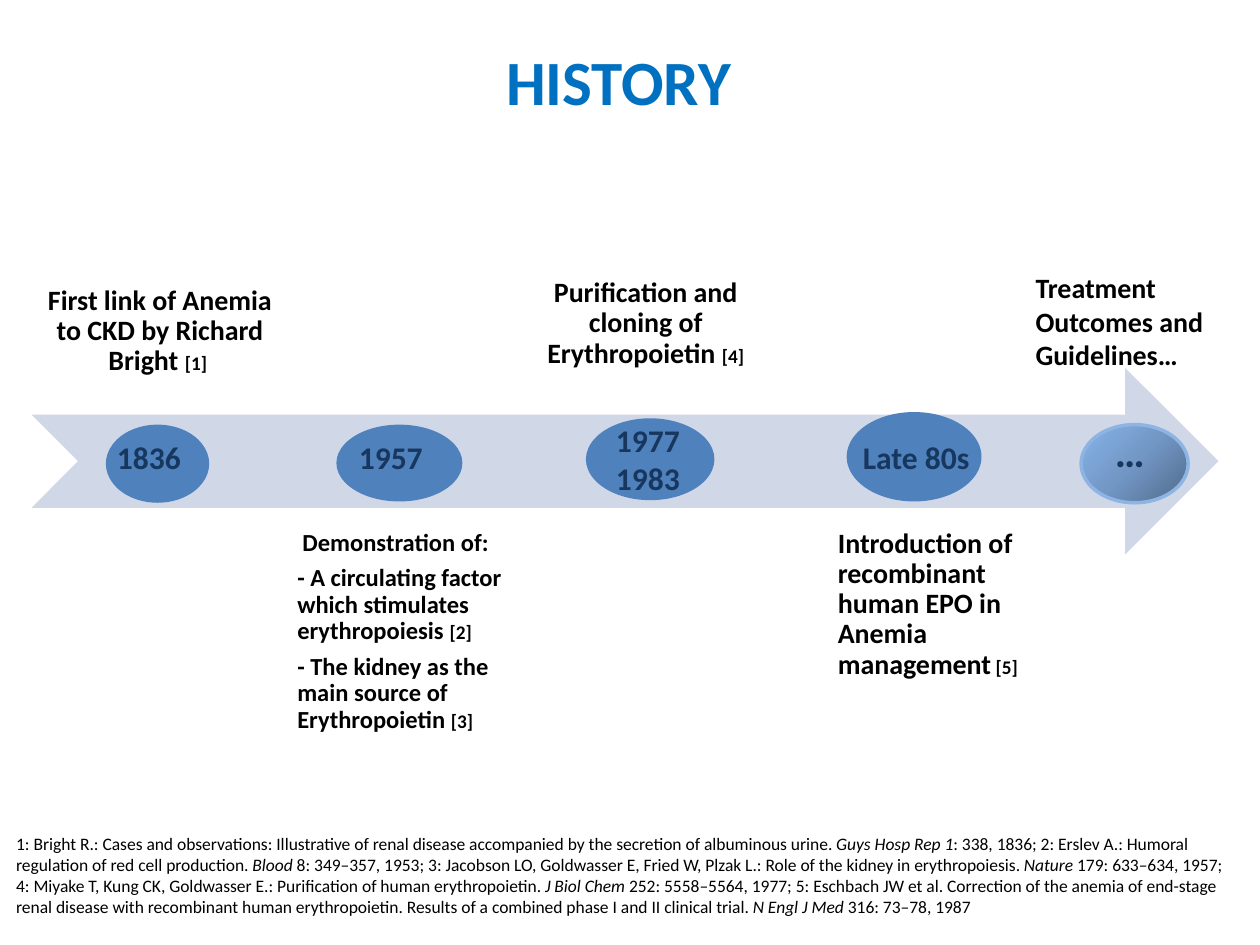
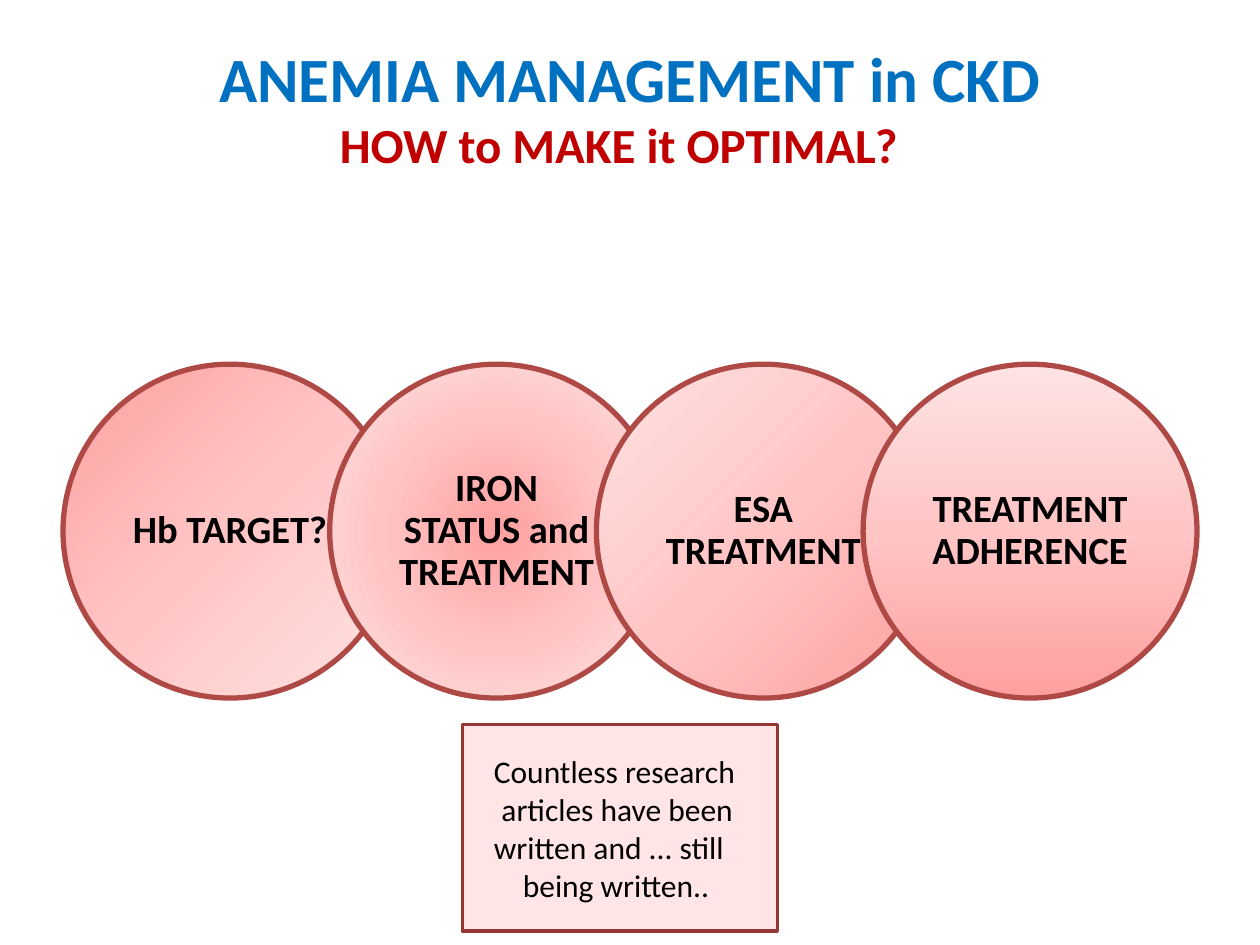
from lxml import etree
from pptx import Presentation
from pptx.dml.color import RGBColor
from pptx.enum.shapes import MSO_SHAPE
from pptx.enum.text import MSO_ANCHOR, MSO_AUTO_SIZE, PP_ALIGN
from pptx.oxml.ns import qn
from pptx.util import Pt

PX = 9144  # 100 px to the inch
FONT = "Calibri"
COLORS = {
    "title": "0070C0", "subtitle": "C00000", "text": "000000", "year": "17375E",
    "arrow": "D0D8E8", "milestone": "4F81BD", "future_line": "8EB4E3",
    "circle_line": "AE4946", "note": "FFE5E5", "note_line": "953735",
}
FUTURE_STOPS = ("506A8A", "7297C5", "87B3E9")
CIRCLE_STOPS = ("FFA0A0", "FFC5C5", "FFE3E3")
FROM_CORNER = {"l": 100, "t": 100}
FROM_CENTER = {"l": 50, "t": 50, "r": 50, "b": 50}

LEFT, CENTER = PP_ALIGN.LEFT, PP_ALIGN.CENTER
TOP, MIDDLE, BOTTOM = MSO_ANCHOR.TOP, MSO_ANCHOR.MIDDLE, MSO_ANCHOR.BOTTOM
OVAL, RECTANGLE = MSO_SHAPE.OVAL, MSO_SHAPE.RECTANGLE
NOTCHED_ARROW = MSO_SHAPE.NOTCHED_RIGHT_ARROW
NO_FIT = MSO_AUTO_SIZE.NONE


def emu(*lengths):
    return [round(length * PX) for length in lengths]


def rgb(name):
    return RGBColor.from_string(COLORS[name])


def write(shape, paragraphs, size=16, color="text", bold=True, align=LEFT, anchor=TOP,
          inset=(10, 5), wrap=True, spacing=None, after=0, indents=()):
    """Fill a shape with paragraphs, each a list of (text, run options).

    indents holds one dict of marL, marR and indent in px for each paragraph.
    """
    frame = shape.text_frame
    frame.word_wrap = wrap
    frame.auto_size = NO_FIT
    frame.vertical_anchor = anchor
    frame.margin_left = frame.margin_right = inset[0] * PX
    frame.margin_top = frame.margin_bottom = inset[1] * PX
    for index, runs in enumerate(paragraphs):
        paragraph = frame.add_paragraph() if index else frame.paragraphs[0]
        paragraph.alignment = align
        paragraph.space_before = Pt(0)
        paragraph.space_after = Pt(after)
        if spacing:
            paragraph.line_spacing = spacing
        if index < len(indents):
            for key, length in indents[index].items():
                paragraph._p.get_or_add_pPr().set(key, str(length * PX))
        for text, options in runs:
            run = paragraph.add_run()
            run.text = text
            font = run.font
            font.name = FONT
            font.size = Pt(options.get("size", size))
            font.bold = bold
            font.italic = options.get("italic", False)
            font.color.rgb = rgb(options.get("color", color))


def add_text(slide, box, paragraphs, **options):
    shape = slide.shapes.add_textbox(*emu(*box))
    write(shape, paragraphs, **options)


def set_gradient(shape, stops, angle=None, focus=None):
    """Fill with even stops, along an angle or spreading from a focus."""
    shape.fill.background()
    properties = shape._element.spPr
    gradient = etree.Element(qn("a:gradFill"), rotWithShape="1")
    stop_list = etree.SubElement(gradient, qn("a:gsLst"))
    for index, color in enumerate(stops):
        position = 100000 * index // (len(stops) - 1)
        stop = etree.SubElement(stop_list, qn("a:gs"), pos=str(position))
        etree.SubElement(stop, qn("a:srgbClr"), val=color)
    if focus:
        radial = etree.SubElement(gradient, qn("a:path"))
        radial.set("path", "circle")
        etree.SubElement(radial, qn("a:fillToRect"),
                         {side: str(share * 1000) for side, share in focus.items()})
    else:
        etree.SubElement(gradient, qn("a:lin"), ang=str(angle * 60000), scaled="1")
    properties.replace(properties.find(qn("a:noFill")), gradient)


def add_shape(slide, kind, box, fill=None, line=None, line_width=2, gradient=None):
    shape = slide.shapes.add_shape(kind, *emu(*box))
    shape.shadow.inherit = False
    if gradient:
        set_gradient(shape, **gradient)
    else:
        shape.fill.solid()
        shape.fill.fore_color.rgb = rgb(fill)
    if line:
        shape.line.color.rgb = rgb(line)
        shape.line.width = Pt(line_width)
    else:
        shape.line.fill.background()
    return shape


def add_titled_slide(presentation, box, paragraphs, **options):
    slide = presentation.slides.add_slide(presentation.slide_layouts[5])
    title = slide.shapes.title
    title.left, title.top, title.width, title.height = emu(*box)
    write(title, paragraphs, size=36, color="title", align=CENTER, anchor=MIDDLE, **options)
    return slide


def add_timeline(slide, box):
    left, top, width, height = box
    add_shape(slide, NOTCHED_ARROW, box, "arrow")
    # Oval box, label box and years, measured from the arrow's corner
    milestones = [
        ((59, 45, 82, 62), (58, 51, 71, 40), ["1836"]),
        ((242, 45, 100, 61), (250, 51, 71, 40), ["1957"]),
        ((440, 40, 102, 65), (454, 37, 71, 71), ["1977", "1983"]),
        ((647, 35, 107, 71), (650, 51, 105, 40), ["Late 80s"]),
    ]
    for oval, label, years in milestones:
        add_shape(slide, OVAL, (left + oval[0], top + oval[1], *oval[2:]), "milestone")
        add_text(slide, (left + label[0], top + label[1], *label[2:]),
                 [[(year, {})] for year in years], size=18, color="year", wrap=False)
    add_shape(slide, OVAL, (left + width - 109, top + 45, 85, 62), line="future_line",
              gradient={"stops": FUTURE_STOPS, "focus": FROM_CORNER})
    add_text(slide, (left + width - 92, top + 41, 44, 50), [[("…", {})]],
             size=24, color="year", wrap=False)


def add_events(slide, arrow_left):
    """Place the events above and below the arrow, relative to its left end."""
    small = {"size": 11}
    event = {"inset": (12, 12), "spacing": 0.9, "after": 5}
    above = {**event, "align": CENTER, "anchor": BOTTOM}
    add_text(slide, (arrow_left, 113, 204, 198),
             [[("First link of Anemia to CKD by Richard Bright ", {}), ("[1] ", small)]], **above)
    add_text(slide, (arrow_left + 392, 113, 191, 192),
             [[("Purification and cloning of Erythropoietin ", {}), ("[4]", small)]], **above)
    add_text(slide, (arrow_left + 200, 410, 204, 198), [
        [("Demonstration of:", {})],
        [("- A circulating factor which stimulates erythropoiesis ", {}), ("[2]", small)],
        [("- The kidney as the main source of Erythropoietin ", {}), ("[3]", small)],
    ], size=14, indents=[{"marL": 4}], **{**event, "inset": (11, 11)})
    add_text(slide, (arrow_left + 628, 408, 204, 198),
             [[("Introduction of recombinant human EPO in Anemia management", {}),
               (" [5]", small)]], **event)
    add_text(slide, (arrow_left + 787, 210, 185, 91),
             [[("Treatment", {})], [("Outcomes and Guidelines…", {})]])


def add_references(slide, box):
    journal = {"italic": True}
    add_text(slide, box, [[
        ("1: Bright R.: Cases and observations: Illustrative of renal disease accompanied by "
         "the secretion of albuminous urine. ", {}),
        ("Guys Hosp Rep 1", journal),
        (": 338, 1836; 2: Erslev A.: Humoral regulation of red cell production. ", {}),
        ("Blood ", journal),
        ("8: 349–357, 1953; 3: Jacobson LO, Goldwasser E, Fried W, Plzak L.: "
         "Role of the kidney in erythropoiesis. ", {}),
        ("Nature ", journal),
        ("179: 633–634, 1957;", {}),
    ], [
        ("4: Miyake T, Kung CK, Goldwasser E.: Purification of human erythropoietin. ", {}),
        ("J Biol Chem ", journal),
        ("252: 5558–5564, 1977; 5: Eschbach JW et al. Correction of the anemia of end-stage "
         "renal disease with recombinant human erythropoietin. "
         "Results of a combined phase I and II clinical trial. ", {}),
        ("N Engl J Med ", journal),
        ("316: 73–78, 1987", {}),
    ]], size=10, bold=False)


def add_topic_circles(slide, left, top, diameter, right):
    """Spread overlapping circles evenly between left and right."""
    topics = [
        ("Hb TARGET?", {"angle": 45}),
        ("IRON STATUS and TREATMENT", {"focus": FROM_CENTER}),
        ("ESA TREATMENT", {"focus": FROM_CORNER}),
        ("TREATMENT ADHERENCE", {"angle": 270}),
    ]
    step = (right - left - diameter) / (len(topics) - 1)
    for index, (topic, direction) in enumerate(topics):
        circle = add_shape(slide, OVAL, (left + index * step, top, diameter, diameter),
                           line="circle_line", line_width=3,
                           gradient={"stops": CIRCLE_STOPS, **direction})
        write(circle, [[(topic, {})]], size=22, align=CENTER, anchor=MIDDLE,
              inset=(15, 3), spacing=0.9)


def add_note(slide, box):
    note = add_shape(slide, RECTANGLE, box, "note", line="note_line")
    write(note, [
        [("Countless research", {})],
        [("articles have been written and ... still", {})],
        [("being written..", {})],
    ], size=18, bold=False, anchor=MIDDLE, inset=(25, 20),
        indents=[{}, {"indent": 6}, {"marL": 23}])


def build_history(presentation):
    slide = add_titled_slide(presentation, (41, 1, 900, 125), [[("HISTORY", {})]])
    arrow = (25, 292, 942, 148)
    add_timeline(slide, arrow)
    add_events(slide, arrow[0])
    add_references(slide, (3, 656, 997, 77))


def build_management(presentation):
    slide = add_titled_slide(presentation, (50, 22, 900, 125), [
        [("ANEMIA MANAGEMENT in CKD", {})],
        [("HOW to MAKE it OPTIMAL?", {"size": 28, "color": "subtitle"})],
    ], indents=[{}, {"marR": 18}])
    add_topic_circles(slide, left=50, top=289, diameter=265, right=950)
    add_note(slide, (367, 575, 250, 164))


def main():
    presentation = Presentation()
    presentation.slide_width, presentation.slide_height = emu(1000, 750)
    build_history(presentation)
    build_management(presentation)
    presentation.save("out.pptx")


if __name__ == "__main__":
    main()
